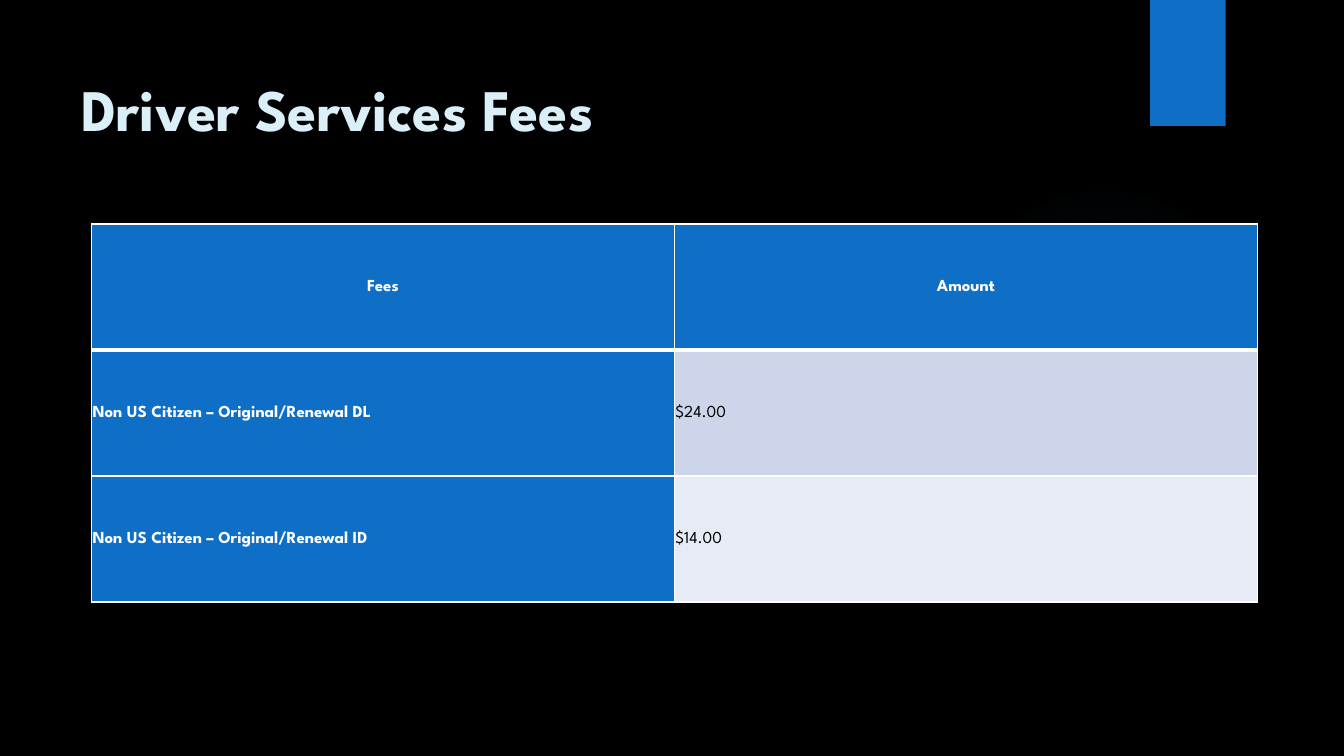
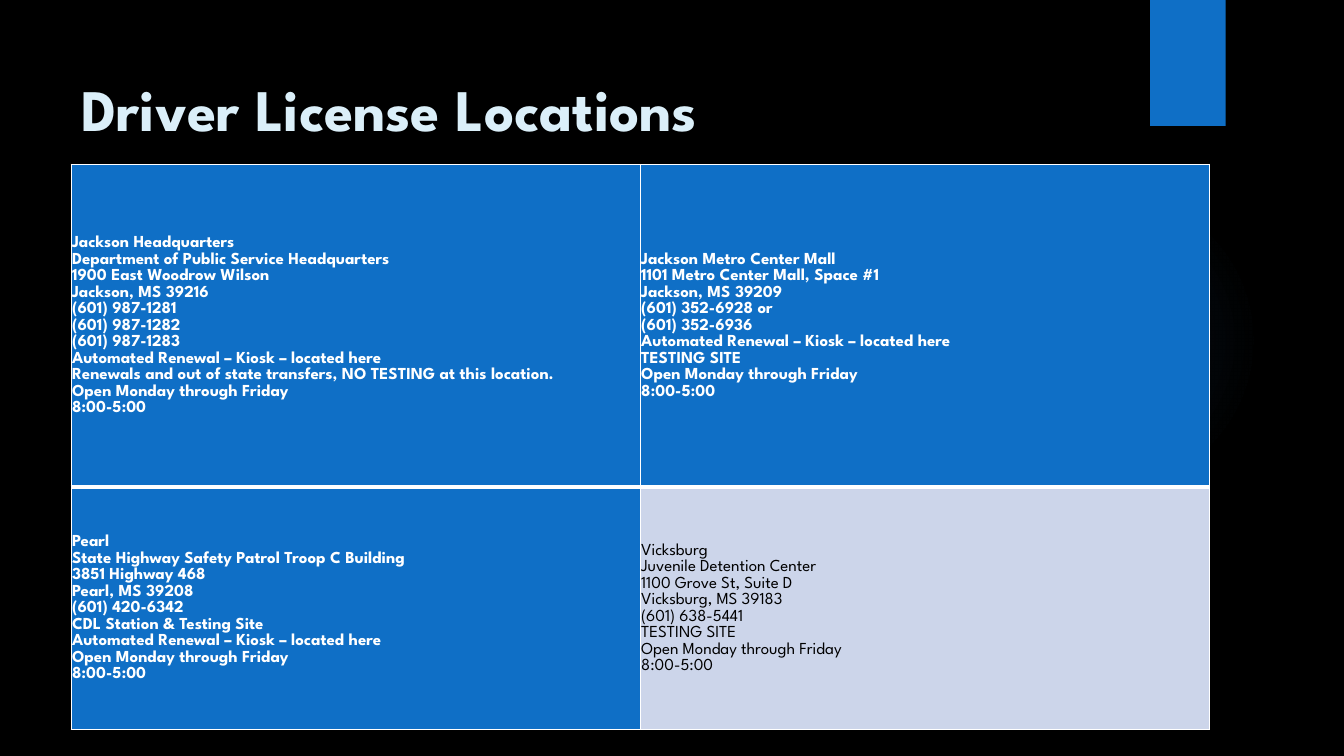
"""Build two dark slides on driver fees and license locations."""
from dataclasses import dataclass

from pptx import Presentation
from pptx.dml.color import RGBColor
from pptx.enum.shapes import MSO_SHAPE
from pptx.enum.text import MSO_ANCHOR, PP_ALIGN
from pptx.oxml import parse_xml
from pptx.oxml.ns import nsdecls, qn
from pptx.presentation import Presentation as Deck
from pptx.shapes.autoshape import Shape
from pptx.slide import Slide
from pptx.table import _Cell as Cell
from pptx.text.text import _Paragraph as Para
from pptx.util import Pt

FONT = "League Spartan"
BLACK, WHITE = "000000", "FFFFFF"
BLUE, PALE, GLOW = "0F6FC6", "DBEFF9", "448AD7"
BANDS = ("CCD5EA", "E7EBF5")
INSET = 0.7


@dataclass(frozen=True)
class Grid:
    title: str
    left: float
    top: float
    width: float
    rows: tuple[float, ...]
    head: PP_ALIGN
    cells: tuple[tuple[str, str], ...]


FEES = Grid(
    "Driver Services Fees", 65.4, 160, 832.8, (90, 90, 90), PP_ALIGN.CENTER,
    (
        ("Fees", "Amount"),
        ("Non US Citizen – Original/Renewal DL", "$24.00"),
        ("Non US Citizen – Original/Renewal ID", "$14.00"),
    ),
)

SITES = Grid(
    "Driver License Locations", 50.8, 117.5, 813, (230.5, 173), PP_ALIGN.LEFT,
    (
        (
            """Jackson Headquarters
Department of Public Service Headquarters
1900 East Woodrow Wilson
Jackson, MS 39216
(601) 987-1281
(601) 987-1282
(601) 987-1283
Automated Renewal – Kiosk – located here
Renewals and out of state transfers, NO TESTING at this location.
Open Monday through Friday
8:00-5:00""",
            """Jackson Metro Center Mall
1101 Metro Center Mall, Space #1
Jackson, MS 39209
(601) 352-6928 or
(601) 352-6936
Automated Renewal – Kiosk – located here
TESTING SITE
Open Monday through Friday
8:00-5:00""",
        ),
        (
            """Pearl
State Highway Safety Patrol Troop C Building
3851 Highway 468
Pearl, MS 39208
(601) 420-6342
CDL Station & Testing Site
Automated Renewal – Kiosk – located here
Open Monday through Friday
8:00-5:00""",
            """Vicksburg
Juvenile Detention Center
1100 Grove St, Suite D
Vicksburg, MS 39183
(601) 638-5441
TESTING SITE
Open Monday through Friday
8:00-5:00""",
        ),
    ),
)


def tone(code: str) -> RGBColor:
    return RGBColor.from_string(code)


def write(para: Para, text: str, size: float, code: str, bold: bool) -> None:
    para.text = text
    for run in para.runs:
        font = run.font
        font.name, font.size, font.bold = FONT, Pt(size), bold
        font.color.rgb = tone(code)


def add_shape(slide: Slide, kind: MSO_SHAPE, left: float, top: float,
              width: float, height: float) -> Shape:
    shape = slide.shapes.add_shape(kind, Pt(left), Pt(top), Pt(width), Pt(height))
    shape.shadow.inherit = False
    shape.line.fill.background()
    return shape


def add_glow(slide: Slide) -> None:
    shape = add_shape(slide, MSO_SHAPE.OVAL, 677.5, 131.8, 221.8, 221.8)
    shape.fill.gradient()
    stops = "".join(
        f'<a:gs pos="{place * 1000}"><a:srgbClr val="{GLOW}">'
        f'<a:alpha val="{alpha * 1000}"/></a:srgbClr></a:gs>'
        for place, alpha in ((0, 7), (36, 6), (69, 0))
    )
    fade = parse_xml(
        f'<a:gradFill {nsdecls("a")}><a:gsLst>{stops}</a:gsLst><a:path path="circle">'
        '<a:fillToRect l="50000" t="50000" r="50000" b="50000"/></a:path></a:gradFill>'
    )
    props = shape._element.spPr
    props.replace(props.find(qn("a:gradFill")), fade)


def add_frame(slide: Slide, title: str) -> None:
    fill = slide.background.fill
    fill.solid()
    fill.fore_color.rgb = tone(BLACK)
    add_glow(slide)
    flag = add_shape(slide, MSO_SHAPE.RECTANGLE, 821.5, 0, 54, 90)
    flag.fill.solid()
    flag.fill.fore_color.rgb = tone(BLUE)
    box = slide.shapes.add_textbox(Pt(51), Pt(36), Pt(741), Pt(110))
    frame = box.text_frame
    frame.word_wrap = True
    frame.margin_top = Pt(16)
    write(frame.paragraphs[0], title, 42, PALE, True)


def add_edge(cell: Cell, side: str, width: float) -> None:
    cell._tc.get_or_add_tcPr().append(parse_xml(
        f'<a:ln{side} {nsdecls("a")} w="{Pt(width)}"><a:solidFill>'
        f'<a:srgbClr val="{WHITE}"/></a:solidFill></a:ln{side}>'
    ))


def fill_cell(cell: Cell, text: str, row: int, col: int, head: PP_ALIGN) -> None:
    thick = {(0, "B"), (1, "T")}
    for side in "LRTB":
        add_edge(cell, side, 3 if (row, side) in thick else 1)
    strong = row == 0 or col == 0
    cell.fill.solid()
    cell.fill.fore_color.rgb = tone(BLUE if strong else BANDS[(row - 1) % 2])
    cell.margin_left = cell.margin_right = Pt(INSET)
    cell.margin_top = cell.margin_bottom = Pt(INSET)
    cell.vertical_anchor = MSO_ANCHOR.MIDDLE
    para = cell.text_frame.paragraphs[0]
    write(para, text, 12, WHITE if strong else BLACK, strong)
    para.line_spacing = 1.07
    para.alignment = head if row == 0 else PP_ALIGN.LEFT


def add_grid(slide: Slide, grid: Grid) -> None:
    count = len(grid.cells[0])
    table = slide.shapes.add_table(
        len(grid.rows), count, Pt(grid.left), Pt(grid.top),
        Pt(grid.width), Pt(sum(grid.rows)),
    ).table
    table.first_col = True
    table.horz_banding = False
    for col in table.columns:
        col.width = Pt(grid.width / count)
    for row, (height, texts) in enumerate(zip(grid.rows, grid.cells)):
        table.rows[row].height = Pt(height)
        for col, text in enumerate(texts):
            fill_cell(table.cell(row, col), text, row, col, grid.head)


def add_page(deck: Deck, grid: Grid) -> None:
    slide = deck.slides.add_slide(deck.slide_layouts[6])
    add_frame(slide, grid.title)
    add_grid(slide, grid)


def main() -> None:
    deck = Presentation()
    deck.slide_width, deck.slide_height = Pt(960), Pt(540)
    for grid in (FEES, SITES):
        add_page(deck, grid)
    deck.save("out.pptx")


if __name__ == "__main__":
    main()
